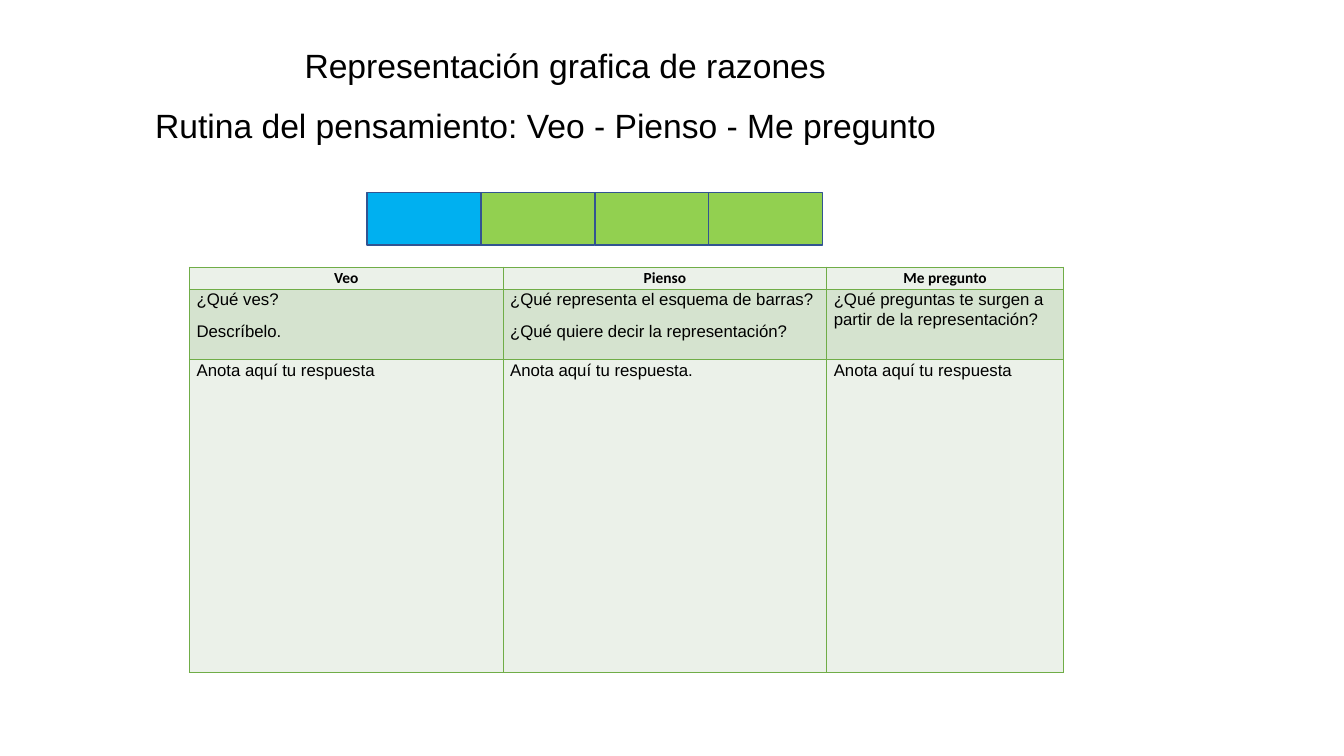
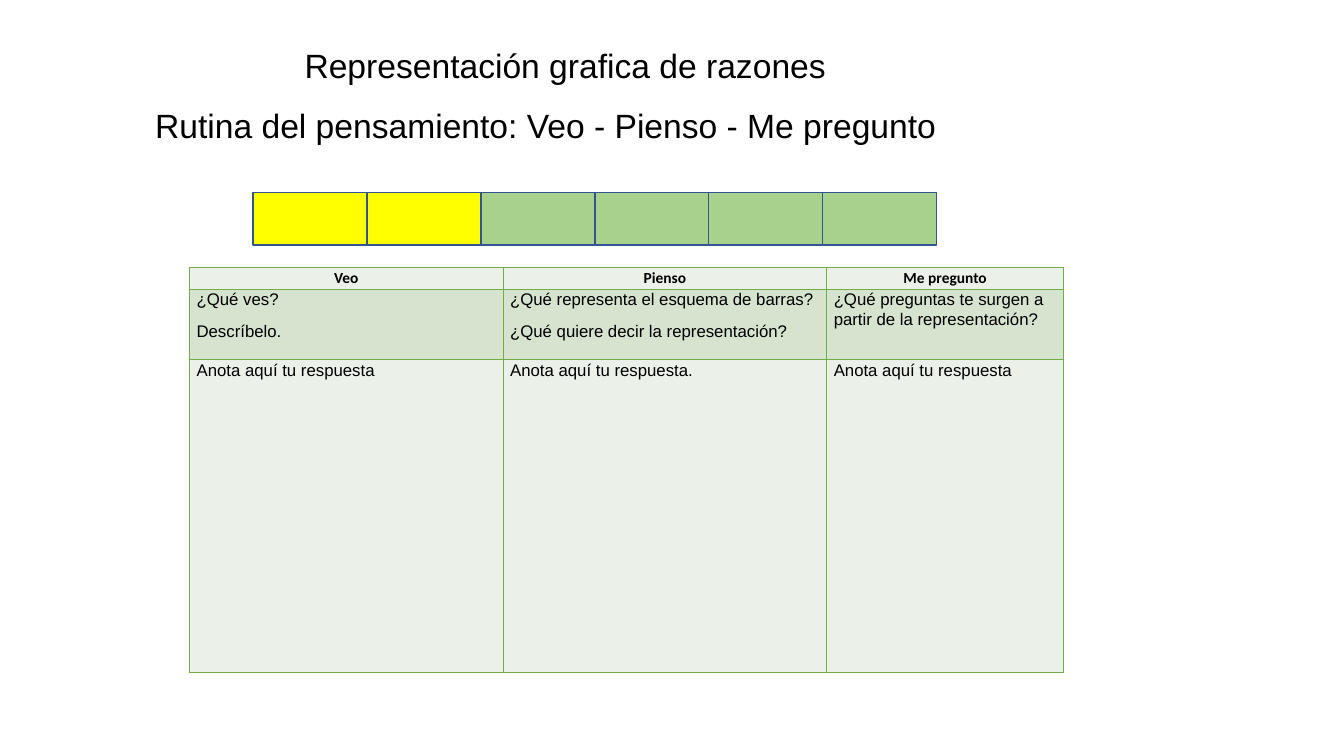
from lxml import etree
from pptx import Presentation
from pptx.dml.color import RGBColor
from pptx.enum import shapes, text
from pptx.oxml import ns
from pptx.util import Inches, Pt

# Colours
BLACK = RGBColor(0, 0, 0)
NAVY = RGBColor(0x32, 0x54, 0x91)
BLUE = RGBColor(0x00, 0xB0, 0xF0)
LIME = RGBColor(0x92, 0xD0, 0x50)
YELLOW = RGBColor(0xFF, 0xFF, 0x00)
SAGE = RGBColor(0xA9, 0xD1, 0x8E)
PALE = RGBColor(0xEB, 0xF1, 0xE9)
SOFT = RGBColor(0xD5, 0xE3, 0xCF)
GREEN = RGBColor(0x70, 0xAD, 0x47)

LEFT, MID, JUST = (text.PP_ALIGN.LEFT, text.PP_ALIGN.CENTER,
                   text.PP_ALIGN.JUSTIFY)

# Content
TITLE = "Representación grafica de razones"
ROUTINE = "Rutina del pensamiento: Veo - Pienso - Me pregunto"
HEADS = ["Veo", "Pienso", "Me pregunto"]
ASKS = [
    ["¿Qué ves?", "Descríbelo."],
    ["¿Qué representa el esquema de barras?",
     "¿Qué quiere decir la representación?"],
    ["¿Qué preguntas te surgen a partir de la representación?"],
]
NOTES = ["Anota aquí tu respuesta", "Anota aquí tu respuesta.",
         "Anota aquí tu respuesta"]
BARS = [
    [(BLUE, 1), (LIME, 3)],
    [(YELLOW, 2), (SAGE, 4)],
]

# Layout in inches
BAR_MID, BAR_TOP, BAR_W, BAR_H = 5.9, 1.91, 1.13, 0.52
COLS = [3.11, 3.21, 2.35]
ROWS = [0.22, 0.7, 3.1]


def write(frame, lines, size=12, font="Arial", bold=False, align=LEFT,
          line=None, after=None):
    frame.word_wrap = True
    for i, words in enumerate(lines):
        para = frame.paragraphs[0] if i == 0 else frame.add_paragraph()
        para.alignment = align
        para.space_before = Pt(0)
        if line:
            para.line_spacing = line
        if after:
            para.space_after = Pt(after)
        run = para.add_run()
        run.text = words
        run.font.size, run.font.name, run.font.bold = Pt(size), font, bold
        run.font.color.rgb = BLACK


def add_heads(slide):
    title = slide.shapes.title
    title.left, title.top = Inches(2.92), Inches(0.4)
    title.width, title.height = Inches(5.84), Inches(0.5)
    sub = slide.shapes.add_textbox(Inches(1.44), Inches(0.99),
                                   Inches(8.12), Inches(0.5))
    for box, words in ((title, TITLE), (sub, ROUTINE)):
        frame = box.text_frame
        frame.auto_size = text.MSO_AUTO_SIZE.NONE
        frame.vertical_anchor = text.MSO_ANCHOR.TOP
        write(frame, [words], size=24)


def add_bar(slide, parts):
    fills = [fill for fill, count in parts for _ in range(count)]
    start = BAR_MID - len(fills) * BAR_W / 2
    for i, fill in enumerate(fills):
        unit = slide.shapes.add_shape(
            shapes.MSO_SHAPE.RECTANGLE, Inches(start + i * BAR_W),
            Inches(BAR_TOP), Inches(BAR_W), Inches(BAR_H))
        unit.shadow.inherit = False
        unit.fill.solid()
        unit.fill.fore_color.rgb = fill
        unit.line.color.rgb = NAVY
        unit.line.width = Pt(1)


def add_border(cell):
    props = cell._tc.get_or_add_tcPr()
    for i, side in enumerate("LRTB"):
        edge = etree.Element(ns.qn(f"a:ln{side}"), w=str(Pt(1)))
        fill = etree.SubElement(edge, ns.qn("a:solidFill"))
        etree.SubElement(fill, ns.qn("a:srgbClr"), val=str(GREEN))
        props.insert(i, edge)


def add_grid(slide):
    grid = slide.shapes.add_table(
        len(ROWS), len(COLS), Inches(1.88), Inches(2.65),
        Inches(sum(COLS)), Inches(sum(ROWS))).table
    grid.first_row = grid.horz_banding = False
    for col, width in zip(grid.columns, COLS):
        col.width = Inches(width)
    for row, height in zip(grid.rows, ROWS):
        row.height = Inches(height)

    # Lines, fill and text format of each row
    head = dict(size=11, font="Calibri", bold=True, align=MID)
    rows = [
        ([[h] for h in HEADS], PALE, head),
        (ASKS, SOFT, {}),
        ([[n] for n in NOTES], PALE, dict(align=JUST)),
    ]
    for r, (cells, fill, style) in enumerate(rows):
        for c, lines in enumerate(cells):
            cell = grid.cell(r, c)
            cell.margin_left = cell.margin_right = Inches(0.07)
            cell.margin_top = cell.margin_bottom = 0
            cell.fill.solid()
            cell.fill.fore_color.rgb = fill
            add_border(cell)
            write(cell.text_frame, lines, line=1.07, after=8, **style)


def main():
    deck = Presentation()
    deck.slide_width, deck.slide_height = Inches(13.33), Inches(7.5)
    for parts in BARS:
        slide = deck.slides.add_slide(deck.slide_layouts[5])
        add_heads(slide)
        add_bar(slide, parts)
        add_grid(slide)
    deck.save("out.pptx")


if __name__ == "__main__":
    main()
